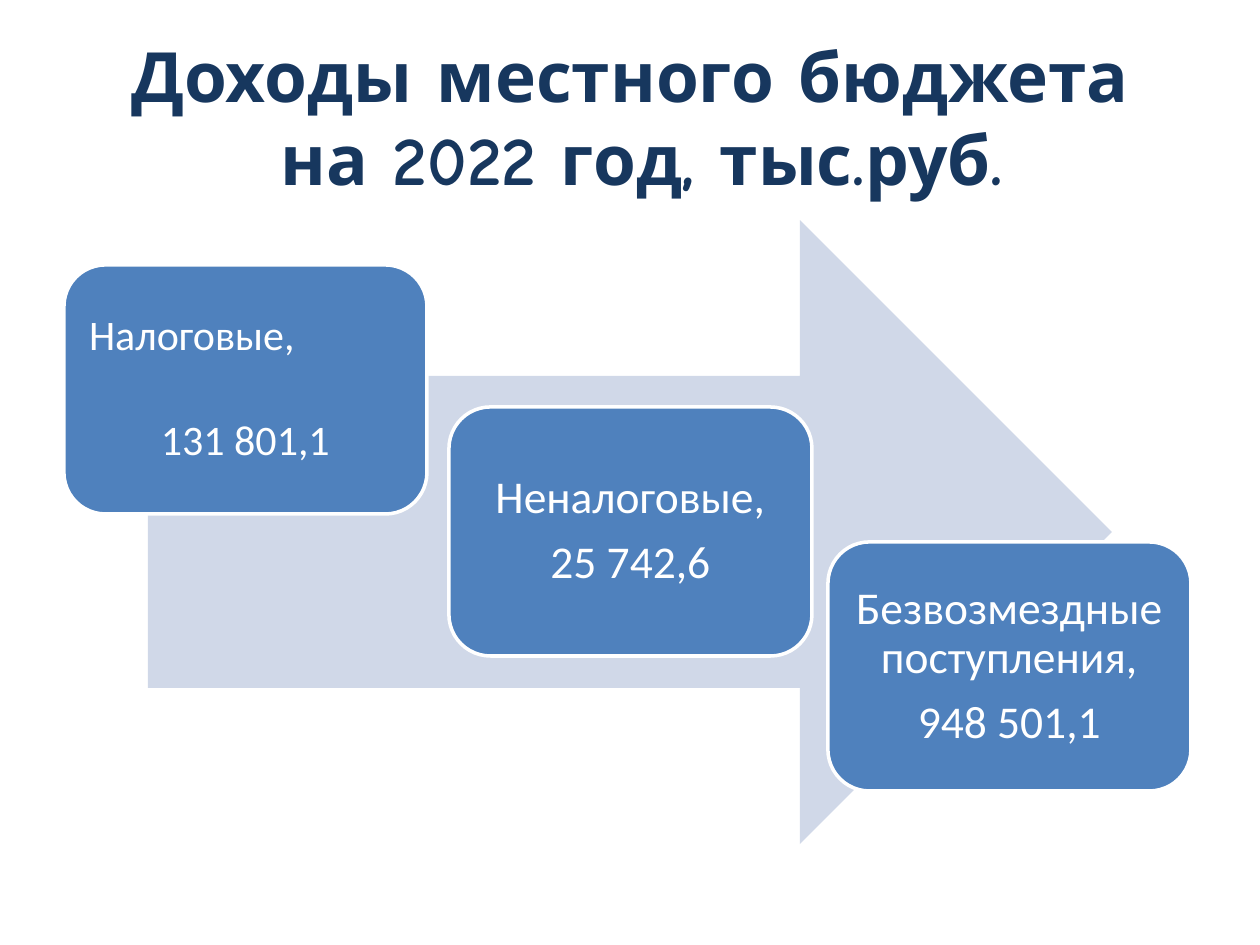
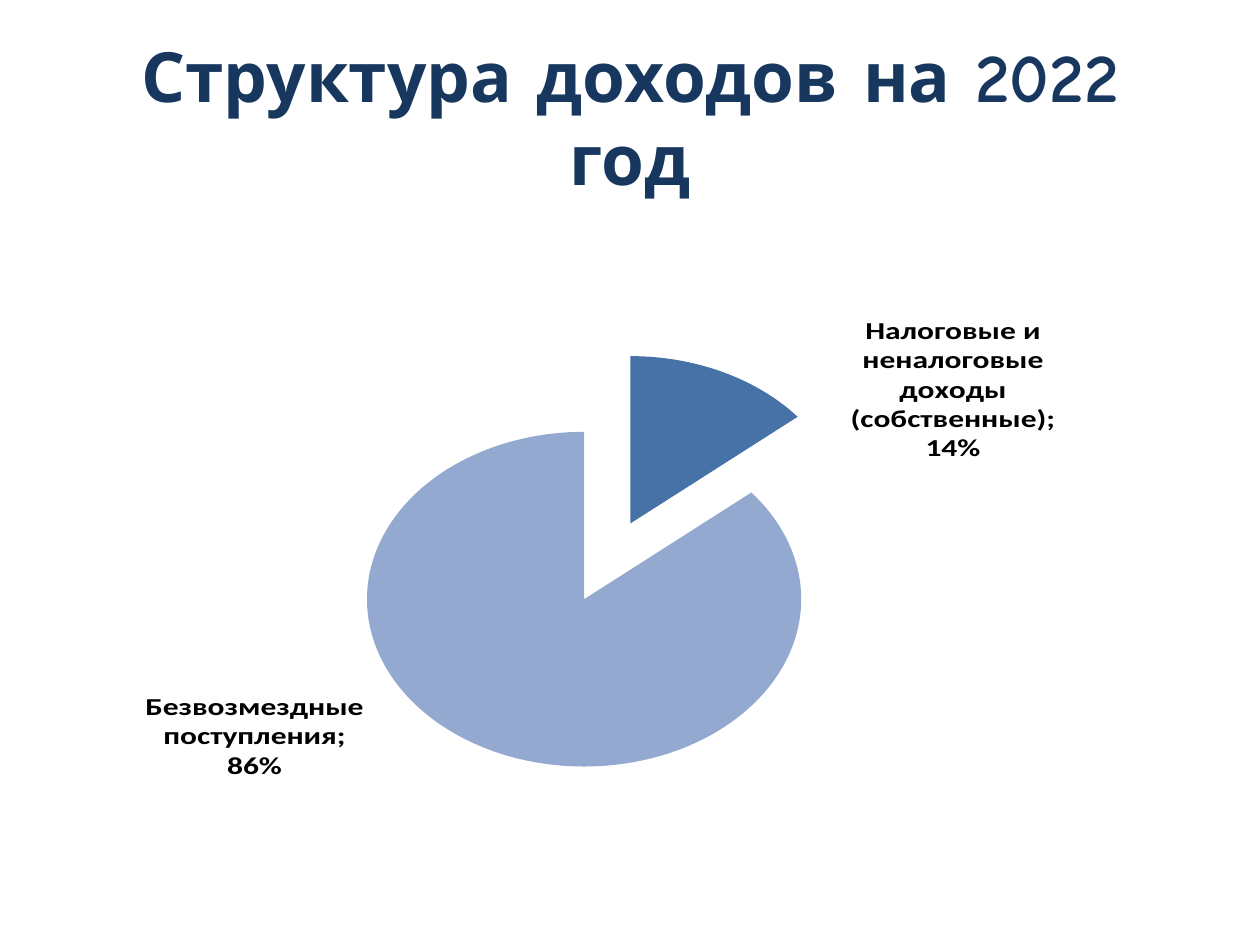
from copy import deepcopy

from lxml.etree import SubElement
from pptx import Presentation
from pptx.chart.data import CategoryChartData
from pptx.dml.color import RGBColor
from pptx.enum.chart import XL_CHART_TYPE as ChartType, XL_LABEL_POSITION as LabelPosition
from pptx.enum.shapes import MSO_SHAPE as Shape
from pptx.enum.text import MSO_ANCHOR as Anchor, PP_ALIGN as Align
from pptx.oxml.ns import qn
from pptx.util import Pt

EMU_PER_PX = 914400 / 126
PAGE_SIZE = (1260, 945)
TITLE_BOX = (63, 37, 1134, 158)
CONTENT_BOX = (63, 220, 1134, 624)
NAVY, BLUE, PALE, WHITE, BLACK = "17375E", "4F81BD", "D0D8E8", "FFFFFF", "000000"
SLICE_COLORS = ("4672A8", "93A9CF")
TITLE_FONT, BODY_FONT = "Comic Neue", "Calibri"

CARD_SIZE = (363, 249)
CARD_MARGIN = 13
INCOME_CARDS = [
    ((1, 45), ("Налоговые,", "131 801,1"), 24, 34, Align.LEFT),
    ((386, 187), ("Неналоговые,", "25 742,6"), 26, 9, Align.CENTER),
    ((765, 322), ("Безвозмездные поступления,", "948 501,1"), 26, 9, Align.CENTER),
]
INCOME_SHARES = {
    "Налоговые и неналоговые доходы (собственные)": 0.14,
    "Безвозмездные поступления": 0.86,
}
PLOT_LAYOUT = {"x": 0.24, "y": 0.11, "w": 0.48, "h": 0.87}
LABEL_OFFSETS = [{"x": 0.11, "y": 0.2}, {"x": -0.11, "y": -0.11}]


def px(*lengths):
    """Turn pixel lengths into EMU."""
    return [round(length * EMU_PER_PX) for length in lengths]


def color(hex_code):
    """Return the colour for a hex string."""
    return RGBColor.from_string(hex_code)


def style_font(font, name, size, hex_code, bold=False):
    """Set the face, size, colour and weight of a font."""
    font.name, font.size, font.bold = name, Pt(size), bold
    font.color.rgb = color(hex_code)


def add_title(page, text):
    """Add the slide title."""
    frame = page.shapes.add_textbox(*px(*TITLE_BOX)).text_frame
    frame.word_wrap = True
    frame.vertical_anchor = Anchor.MIDDLE
    frame.text = text
    para = frame.paragraphs[0]
    para.alignment = Align.CENTER
    for span in para.runs:
        style_font(span.font, TITLE_FONT, 39.6, NAVY, True)


def add_filled(page, preset, box, fill):
    """Add a flat preset shape without an outline."""
    shape = page.shapes.add_shape(preset, *px(*box))
    shape.shadow.inherit = False
    shape.fill.solid()
    shape.fill.fore_color.rgb = color(fill)
    shape.line.fill.background()
    return shape


def add_card(page, box, lines, size, gap, first_align):
    """Add a rounded card with an income type and its amount."""
    card = add_filled(page, Shape.ROUNDED_RECTANGLE, box, BLUE)
    card.line.color.rgb = color(WHITE)
    card.line.width = Pt(2)
    frame = card.text_frame
    frame.word_wrap = True
    frame.vertical_anchor = Anchor.MIDDLE
    frame.margin_left, frame.margin_right = px(CARD_MARGIN, CARD_MARGIN)
    frame.text = "\n".join(lines)
    label, amount = frame.paragraphs
    label.alignment, amount.alignment = first_align, Align.CENTER
    amount.space_before = Pt(gap)
    for para in frame.paragraphs:
        para.line_spacing = 0.9
        style_font(para.runs[0].font, BODY_FONT, size, WHITE)


def add_income_arrow(page, box):
    """Add the arrow and the cards that descend along it."""
    left, top, width, height = box
    add_filled(page, Shape.RIGHT_ARROW, (left + 85, top, width - 170, height), PALE)
    for (dx, dy), lines, size, gap, align in INCOME_CARDS:
        add_card(page, (left + dx, top + dy, *CARD_SIZE), lines, size, gap, align)


def make_layout(parent, settings):
    """Add a manual chart layout to a parent element."""
    manual = SubElement(SubElement(parent, qn("c:layout")), qn("c:manualLayout"))
    for name, value in settings.items():
        SubElement(manual, qn(f"c:{name}")).set("val", str(value))
    return manual.getparent()


def place_plot(chart):
    """Fix the inner plot area of a chart."""
    area = chart.plots[0]._element.getparent()
    for old in area.findall(qn("c:layout")):
        area.remove(old)
    modes = {"layoutTarget": "inner", "xMode": "edge", "yMode": "edge"}
    area.insert(0, make_layout(area, modes | PLOT_LAYOUT))


def label_slices(series):
    """Label each slice with its name and share, moved off the pie."""
    labels = series.data_labels
    style_font(labels.font, BODY_FONT, 18, BLACK, True)
    labels.number_format, labels.number_format_is_linked = "0%", False
    labels.position = LabelPosition.OUTSIDE_END
    labels.show_value = labels.show_category_name = True
    labels.show_percentage = False
    group = labels._element
    for leader in group.findall(qn("c:showLeaderLines")):
        group.remove(leader)
    SubElement(group, qn("c:separator")).text = "; "
    shared = list(group)
    SubElement(group, qn("c:showLeaderLines")).set("val", "0")
    for index, offset in enumerate(LABEL_OFFSETS):
        label = SubElement(group, qn("c:dLbl"))
        SubElement(label, qn("c:idx")).set("val", str(index))
        make_layout(label, offset)
        label.extend(deepcopy(part) for part in shared)
        group.insert(index, label)


def add_share_pie(page, box):
    """Add the exploded pie of income shares."""
    data = CategoryChartData(number_format="0%")
    data.categories = list(INCOME_SHARES)
    data.add_series("Series 1", list(INCOME_SHARES.values()))
    chart = page.shapes.add_chart(ChartType.PIE, *px(*box), data).chart
    chart.has_legend = chart.has_title = False
    style_font(chart.font, BODY_FONT, 18, BLACK)
    plot = chart.plots[0]
    plot.vary_by_categories = True
    series = plot.series[0]
    for index, hex_code in enumerate(SLICE_COLORS):
        fill = series.points[index].format.fill
        fill.solid()
        fill.fore_color.rgb = color(hex_code)
    explosion = SubElement(series._element, qn("c:explosion"))
    explosion.set("val", "25")
    series._element.find(qn("c:dPt")).addprevious(explosion)
    label_slices(series)
    place_plot(chart)


def main():
    """Build the deck and save it."""
    deck = Presentation()
    deck.slide_width, deck.slide_height = px(*PAGE_SIZE)
    pages = [
        ("Доходы местного бюджета\v на 2022 год, тыс.руб.", add_income_arrow),
        ("Структура доходов на 2022 год", add_share_pie),
    ]
    for title, add_content in pages:
        page = deck.slides.add_slide(deck.slide_layouts[6])
        add_title(page, title)
        add_content(page, CONTENT_BOX)
    deck.save("out.pptx")


if __name__ == "__main__":
    main()
